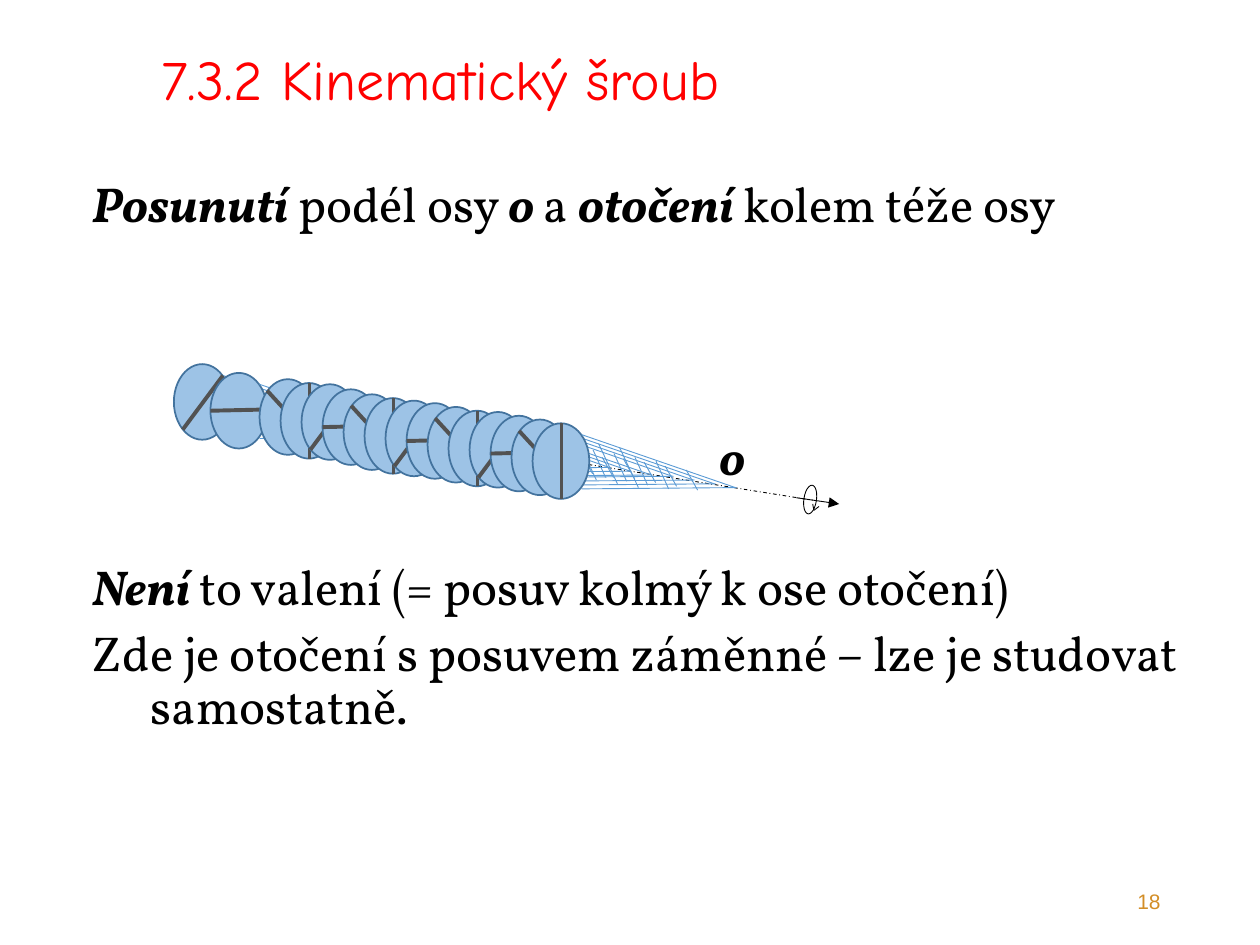
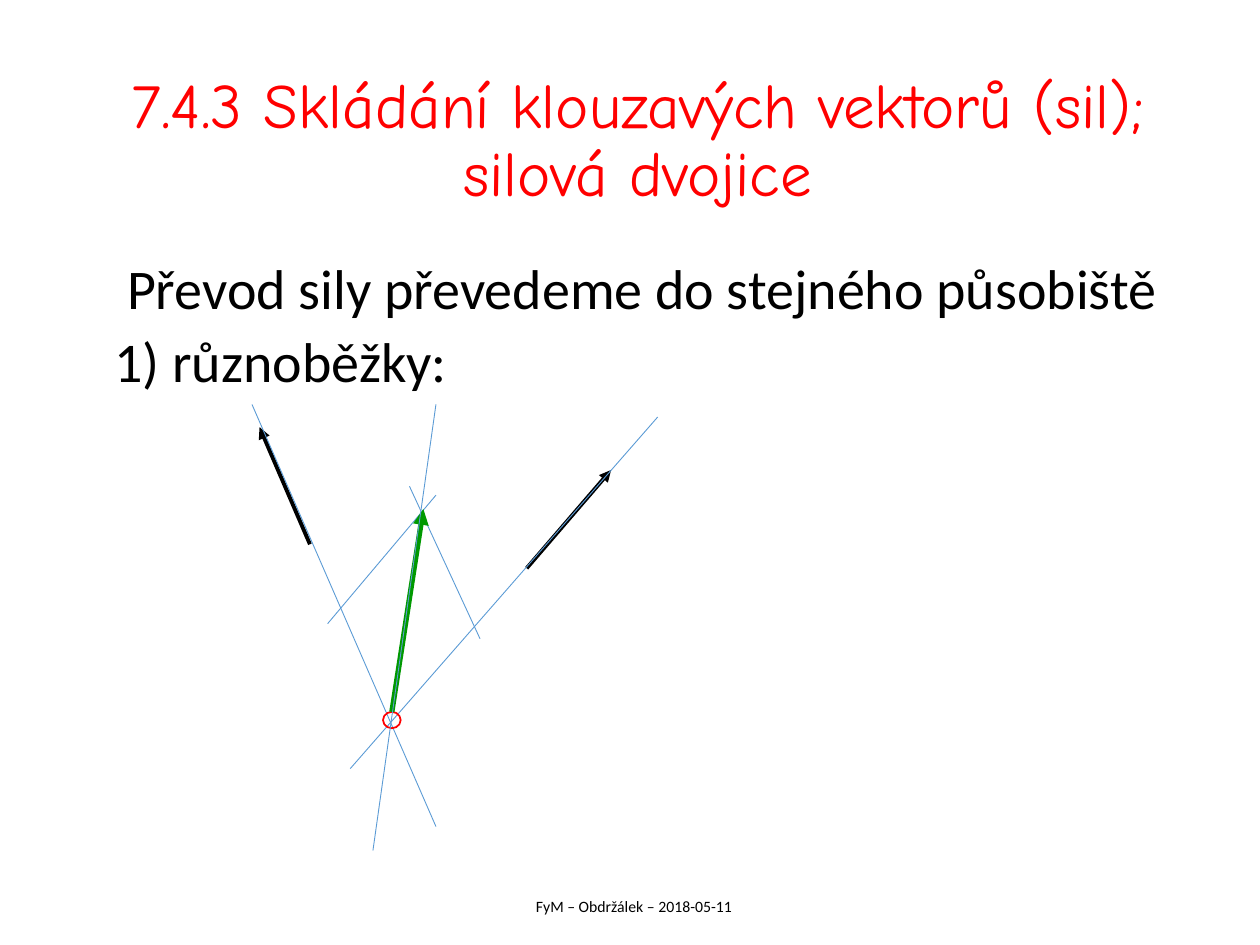
from lxml import etree
from pptx import Presentation
from pptx.dml.color import RGBColor
from pptx.enum.dml import MSO_LINE
from pptx.enum.shapes import MSO_CONNECTOR, MSO_SHAPE
from pptx.enum.text import MSO_ANCHOR, MSO_AUTO_SIZE, PP_ALIGN
from pptx.oxml.ns import qn
from pptx.util import Inches, Pt

RED, BLACK, GREEN, GOLD = "FF0000", "000000", "009900", "D38E27"
BLUE, DISK_FILL, DISK_EDGE, SPOKE_GREY = "5B9BD5", "9DC3E6", "43739E", "525252"
TITLE_FONT = "Comic Neue"

# Slide 1: paragraphs are lists of (text, emphasised) runs
SCREW_TITLE = "7.3.2 Kinematický šroub"
SCREW_INTRO = [[("Posunutí", True), (" podél osy ", False), ("o ", True), ("a ", False),
                ("otočení", True), (" kolem téže osy", False)]]
AXIS_LABEL = [[("o", True)]]
SCREW_NOTES = [
    [("Není ", True), ("to valení (= posuv kolmý k ose otočení)", False)],
    [("Zde je otočení s posuvem záměnné – lze je studovat samostatně.", False)],
]
SLIDE_NUMBER = [[("18", False)]]

DISK_SIZE = (0.45, 0.6)
FIRST_DISKS = [(1.38, 2.89), (1.67, 2.96)]
ROW_LEFT, ROW_STEP = 2.06, 1 / 6
ROW_TOPS = [3.01, 3.04, 3.05, 3.09, 3.13, 3.16, 3.18, 3.2, 3.23, 3.26, 3.27, 3.3, 3.33, 3.36]
# Lines as (x1, y1, x2, y2), measured from the top left of a disk
CONE = [(0.39, 0.09, 1.61, 0.51), (0.39, 0.52, 1.62, 0.51), (0.69, 0.19, 0.84, 0.51),
        (0.98, 0.3, 1.08, 0.52), (1.22, 0.37, 1.31, 0.53)]
SPOKES = [(0.39, 0.09, 0.07, 0.52), (0.44, 0.29, 0, 0.3),
          (0.4, 0.46, 0.06, 0.09), (0.23, 0.6, 0.23, 0)]
AXIS = (1.67, 3.21, 6.45, 3.97)
AXIS_ARROW = (6.32, 3.95, 6.66, 4)
TURN_RING = (6.38, 3.85, 0.1, 0.23)
TURN_TIP = [(6.45, 4, 6.46, 4.05), (6.5, 4.02, 6.46, 4.05)]

# Slide 2
FORCES_TITLE = "7.4.3 Skládání klouzavých vektorů (sil); silová dvojice"
FORCES_TEXT = [[("Převod sily převedeme do stejného působiště", False)],
               [("1) různoběžky:", False)]]
FOOTER = [[("FyM – Obdržálek – 2018-05-11", False)]]
FORCES = [(2.46, 4.32, 2.06, 3.39), (4.18, 4.51, 4.85, 3.73)]
FORCE_LINES = [(2, 3.21, 3.46, 6.56), (5.22, 3.31, 2.78, 6.1)]
CROSSING = (3.04, 5.65, 0.14, 0.13)
PARALLELS = [(3.46, 3.93, 2.6, 4.95), (3.25, 3.86, 3.81, 5.07)]
RESULTANT = (3.11, 5.65, 3.36, 4.04)
RESULTANT_LINE = (2.96, 6.75, 3.46, 3.21)


def rgb(value):
    return RGBColor.from_string(value)


def format_run(run, font, size, color):
    run.font.name = font
    run.font.size = Pt(size)
    run.font.color.rgb = rgb(color)


def set_indent(paragraph, margin, first_line=0):
    properties = paragraph._p.get_or_add_pPr()
    properties.set("marL", str(Inches(margin)))
    properties.set("indent", str(Inches(first_line)))


def add_titled_slide(presentation, text, box, size, alignment, margin=0):
    slide = presentation.slides.add_slide(presentation.slide_layouts[5])
    title = slide.shapes.title
    title.left, title.top, title.width, title.height = map(Inches, box)
    frame = title.text_frame
    frame.word_wrap = True
    frame.auto_size = MSO_AUTO_SIZE.NONE
    frame.vertical_anchor = MSO_ANCHOR.MIDDLE
    paragraph = frame.paragraphs[0]
    paragraph.alignment = alignment
    paragraph.line_spacing = 0.9
    set_indent(paragraph, margin)
    run = paragraph.add_run()
    run.text = text
    format_run(run, TITLE_FONT, size, RED)
    return slide


def add_text(slide, paragraphs, box, font, size, color=BLACK, alignment=PP_ALIGN.LEFT,
             anchor=MSO_ANCHOR.TOP, line_spacing=0.9):
    frame = slide.shapes.add_textbox(*map(Inches, box)).text_frame
    frame.word_wrap = True
    frame.vertical_anchor = anchor
    for index, runs in enumerate(paragraphs):
        paragraph = frame.add_paragraph() if index else frame.paragraphs[0]
        paragraph.alignment = alignment
        paragraph.line_spacing = line_spacing
        if index:
            paragraph.space_before = Pt(7.5)
        for text, emphasised in runs:
            run = paragraph.add_run()
            run.text = text
            format_run(run, font, size, color)
            run.font.bold = run.font.italic = emphasised
    return frame


def add_footer(slide, paragraphs, box, font, size, color, alignment):
    add_text(slide, paragraphs, box, font, size, color, alignment, MSO_ANCHOR.MIDDLE, 1.0)


def add_line(slide, ends, color=BLUE, width=0.5, arrow=False, dash=None):
    connector = slide.shapes.add_connector(MSO_CONNECTOR.STRAIGHT, *map(Inches, ends))
    connector.line.color.rgb = rgb(color)
    connector.line.width = Pt(width)
    if dash:
        connector.line.dash_style = dash
    if arrow:
        etree.SubElement(connector.line._get_or_add_ln(), qn("a:tailEnd"), type="triangle")
    etree.SubElement(connector._element.spPr, qn("a:effectLst"))


def add_ellipse(slide, box, line_color, width=1, fill=None):
    ellipse = slide.shapes.add_shape(MSO_SHAPE.OVAL, *map(Inches, box))
    ellipse.shadow.inherit = False
    if fill:
        ellipse.fill.solid()
        ellipse.fill.fore_color.rgb = rgb(fill)
    else:
        ellipse.fill.background()
    ellipse.line.color.rgb = rgb(line_color)
    ellipse.line.width = Pt(width)
    return ellipse


def shifted(line, left, top):
    x1, y1, x2, y2 = line
    return left + x1, top + y1, left + x2, top + y2


def add_axis(slide):
    add_line(slide, AXIS, BLACK, dash=MSO_LINE.DASH_DOT)
    add_line(slide, AXIS_ARROW, BLACK, arrow=True)
    add_ellipse(slide, TURN_RING, BLACK, 0.5).rotation = 8.3
    for line in TURN_TIP:
        add_line(slide, line, BLACK)


def add_rolling_disks(slide):
    """Draw the overlapping disks, each with its cone and a spoke a quarter cycle further."""
    row = [(ROW_LEFT + index * ROW_STEP, top) for index, top in enumerate(ROW_TOPS)]
    for index, (left, top) in enumerate(FIRST_DISKS + row):
        add_ellipse(slide, (left, top, *DISK_SIZE), DISK_EDGE, fill=DISK_FILL)
        for line in CONE:
            add_line(slide, shifted(line, left, top))
        if index == 0:
            add_axis(slide)
        add_line(slide, shifted(SPOKES[index % len(SPOKES)], left, top), SPOKE_GREY, 2.25)


def build_screw_slide(presentation):
    slide = add_titled_slide(presentation, SCREW_TITLE, (1.18, 0.18, 7.32, 0.95), 32,
                             PP_ALIGN.LEFT)
    for paragraphs, box in ((SCREW_INTRO, (0.63, 1.38, 9, 0.6)),
                            (SCREW_NOTES, (0.63, 4.42, 9, 1.6))):
        frame = add_text(slide, paragraphs, box, "Vollkorn", 28)
        for paragraph in frame.paragraphs:
            set_indent(paragraph, 0.47, -0.47)
    add_text(slide, AXIS_LABEL, (5.61, 3.39, 0.5, 0.6), "Vollkorn", 28)
    add_footer(slide, SLIDE_NUMBER, (7.06, 6.95, 2.25, 0.4), "Arial", 12, GOLD, PP_ALIGN.RIGHT)
    add_rolling_disks(slide)


def build_forces_slide(presentation):
    slide = add_titled_slide(presentation, FORCES_TITLE, (0.69, 0.4, 8.62, 1.45), 36,
                             PP_ALIGN.CENTER, 0.12)
    frame = add_text(slide, FORCES_TEXT, (0.69, 2.02, 8.77, 1.2), "Calibri", 32)
    for paragraph, first_line in zip(frame.paragraphs, (0.1, 0)):
        set_indent(paragraph, 0.12, first_line)
    add_footer(slide, FOOTER, (3.34, 6.99, 3.38, 0.4), "Calibri", 9, BLACK, PP_ALIGN.CENTER)
    for force in FORCES:
        add_line(slide, force, BLACK, 2.25, arrow=True)
    for line in FORCE_LINES:
        add_line(slide, line)
    add_ellipse(slide, CROSSING, RED)
    for line in PARALLELS:
        add_line(slide, line)
    add_line(slide, RESULTANT, GREEN, 3, arrow=True)
    add_line(slide, RESULTANT_LINE)


def main():
    presentation = Presentation()
    presentation.slide_width, presentation.slide_height = Inches(10), Inches(7.5)
    build_screw_slide(presentation)
    build_forces_slide(presentation)
    presentation.save("out.pptx")


if __name__ == "__main__":
    main()
